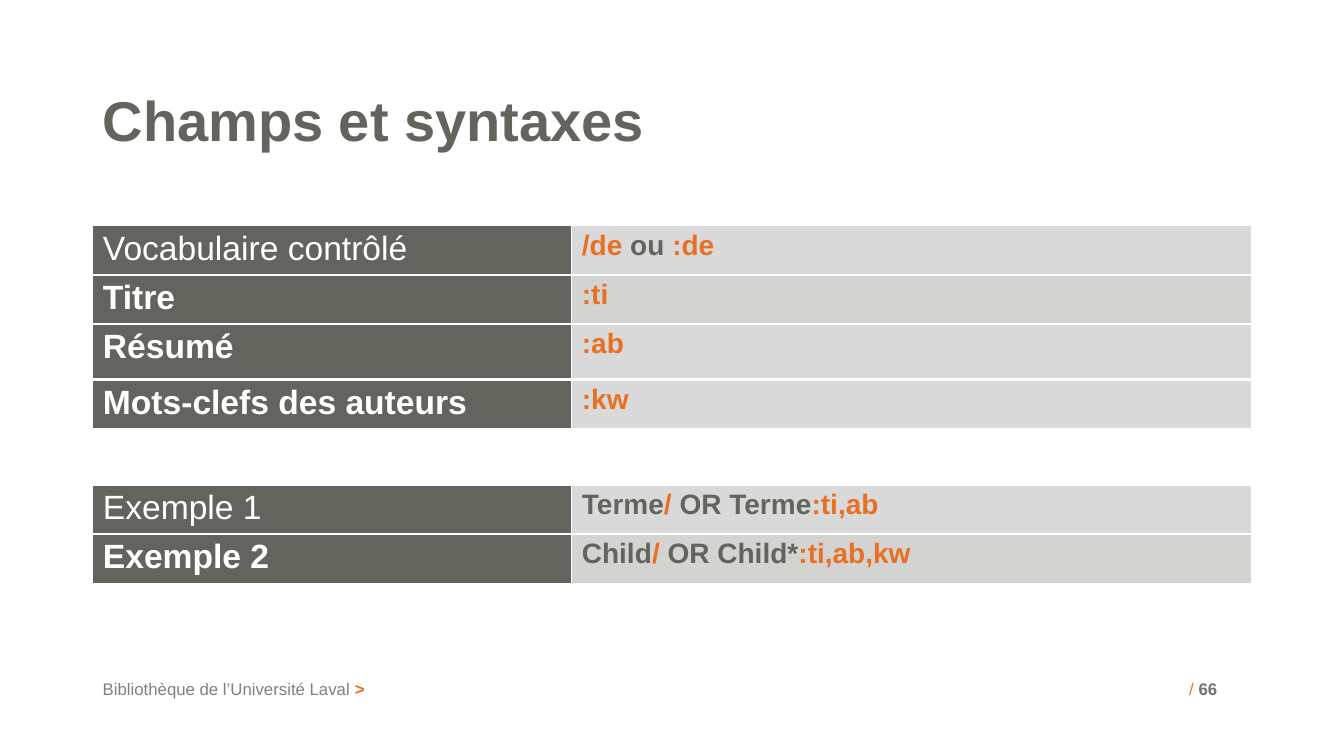
import pptx
import pptx.dml.color
import pptx.enum.text
import pptx.oxml
import pptx.oxml.ns
import pptx.util

Cm, Pt = pptx.util.Cm, pptx.util.Pt
RGB = pptx.dml.color.RGBColor
ANCHOR = pptx.enum.text.MSO_ANCHOR

DARK = RGB(0x64, 0x64, 0x5F)
ORANGE = RGB(0xE9, 0x6F, 0x23)
WHITE = RGB(0xFF, 0xFF, 0xFF)
LIGHT = RGB(0xD9, 0xD9, 0xD9)
BAND = RGB(0xD3, 0xD3, 0xD2)
FOOTER = RGB(0x80, 0x80, 0x80)
NUMBER = RGB(0x76, 0x71, 0x71)

LEFT, WIDTH, LABEL_WIDTH = 2.34, 29.21, 12.07
ROW = 1.2

FIELDS = [
    ("Vocabulaire contrôlé", [("/de ", ORANGE), ("ou ", DARK), (":de", ORANGE)], LIGHT, ROW),
    ("Titre", [(":ti", ORANGE)], BAND, ROW),
    ("Résumé", [(":ab", ORANGE)], LIGHT, 1.4),
    ("Mots-clefs des auteurs", [(":kw", ORANGE)], LIGHT, ROW),
]
EXAMPLES = [
    ("Exemple 1", [("Terme", DARK), ("/", ORANGE), (" OR Terme", DARK), (":ti,ab", ORANGE)],
     LIGHT, ROW),
    ("Exemple 2", [("Child", DARK), ("/", ORANGE), (" OR Child*", DARK), (":ti,ab,kw", ORANGE)],
     BAND, ROW),
]


def write(p, runs, size, bold):
    """Fill a paragraph with (text, colour) runs."""
    p.font.name, p.font.size, p.font.bold = "Arial", Pt(size), bold
    for text, color in runs:
        r = p.add_run()
        r.text = text
        r.font.color.rgb = color


def add_text(s, left, top, width, height, runs, size, bold=False):
    tf = s.shapes.add_textbox(Cm(left), Cm(top), Cm(width), Cm(height)).text_frame
    tf.word_wrap = True
    write(tf.paragraphs[0], runs, size, bold)
    return tf


def add_title(s, left, top, width, height):
    tf = add_text(s, left, top, width, height, [("Champs et syntaxes", DARK)], 40, True)
    tf.paragraphs[0].line_spacing = 0.9


def add_footer(s, left, top, width, height):
    number_width = 1.83
    parts = [
        (left, 26.97, [("Bibliothèque de l’Université Laval ", FOOTER), (">", ORANGE)]),
        (left + width - number_width, number_width, [("/ ", ORANGE), ("66", NUMBER)]),
    ]
    for x, w, runs in parts:
        tf = add_text(s, x, top, w, height, runs, 12)
        tf.vertical_anchor = ANCHOR.MIDDLE
        tf.margin_bottom = Cm(0.28)
        tf.paragraphs[0].runs[1].font.bold = True


def set_borders(cell, **widths):
    """Draw white borders; widths in points by side, given in the order L, R, T, B."""
    tc_pr = cell._tc.get_or_add_tcPr()
    for i, (side, width) in enumerate(widths.items()):
        tc_pr.insert(i, pptx.oxml.parse_xml(
            f'<a:ln{side} {pptx.oxml.ns.nsdecls("a")} w="{Pt(width)}"><a:solidFill>'
            f'<a:srgbClr val="{WHITE}"/></a:solidFill></a:ln{side}>'))


def add_syntax_table(s, left, top, width, rows):
    height = sum(row[3] for row in rows)
    table = s.shapes.add_table(len(rows), 2, Cm(left), Cm(top), Cm(width), Cm(height)).table
    table.first_row = table.horz_banding = False
    table.columns[0].width = Cm(LABEL_WIDTH)
    table.columns[1].width = Cm(width - LABEL_WIDTH)
    for i, (label, syntax, fill, row_height) in enumerate(rows):
        table.rows[i].height = Cm(row_height)
        cells = [([(label, WHITE)], 24, i > 0, DARK), (syntax, 20, True, fill)]
        for j, (runs, size, bold, color) in enumerate(cells):
            cell = table.cell(i, j)
            cell.margin_top = cell.margin_bottom = Cm(0.11)
            cell.fill.solid()
            cell.fill.fore_color.rgb = color
            write(cell.text_frame.paragraphs[0], runs, size, bold)
            set_borders(cell, L=1, R=1, T=2.25 if i else 1,
                        B=2.25 if i < len(rows) - 1 else 1)


def main():
    prs = pptx.Presentation()
    prs.slide_width, prs.slide_height = Cm(33.87), Cm(19.05)
    s = prs.slides.add_slide(prs.slide_layouts[6])
    add_title(s, LEFT, 2.21, WIDTH, 3)
    add_syntax_table(s, LEFT, 5.69, WIDTH, FIELDS)
    add_syntax_table(s, LEFT, 12.22, WIDTH, EXAMPLES)
    add_footer(s, LEFT, 16.92, WIDTH, 1.02)
    prs.save("out.pptx")


if __name__ == "__main__":
    main()
